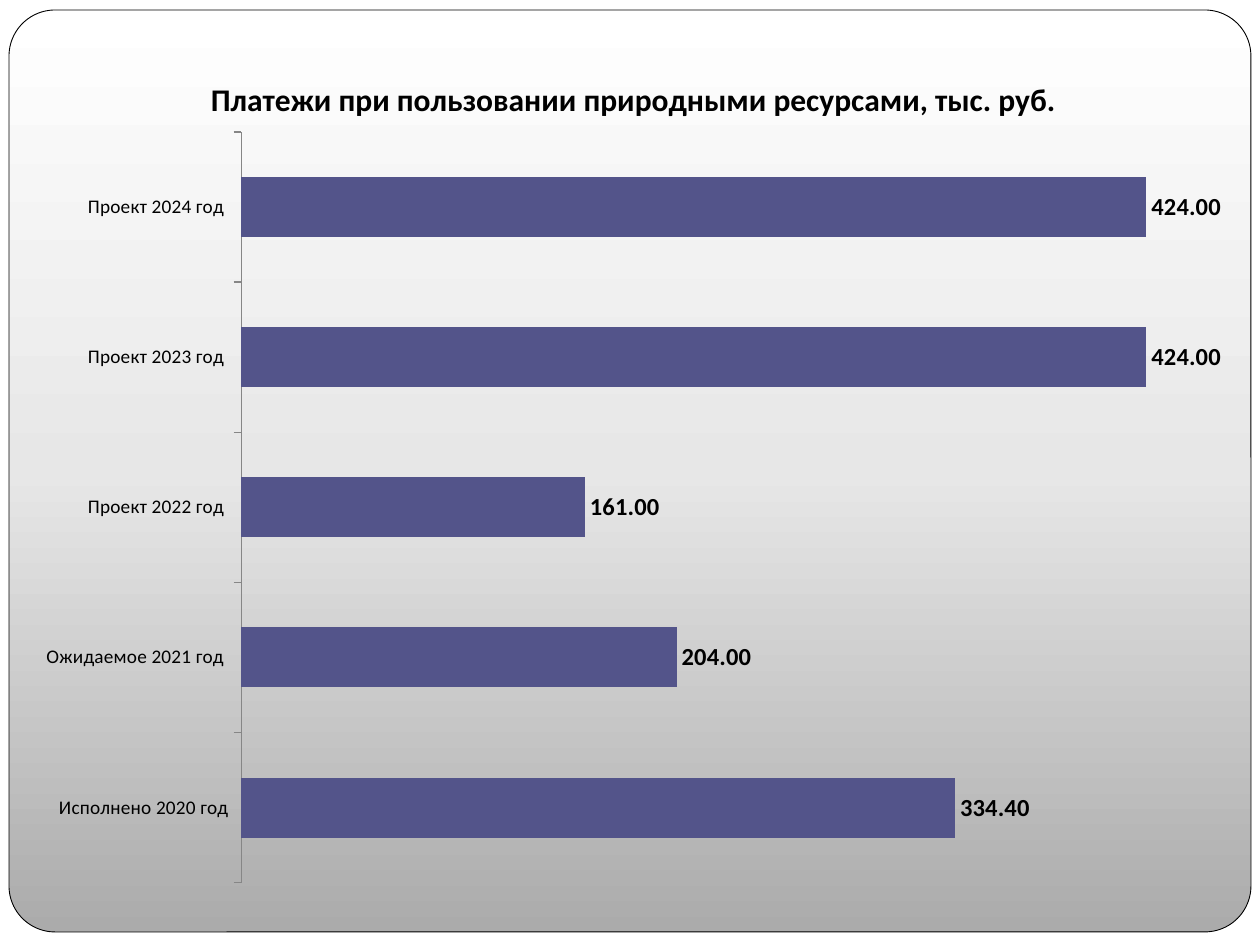
import copy
import pptx
import pptx.chart.data
import pptx.dml.color
import pptx.enum.chart
import pptx.enum.shapes
import pptx.oxml
import pptx.oxml.ns
import pptx.util

PX = 914400 / 126


def px(n):
    return pptx.util.Emu(round(n * PX))


def rgb(value):
    return pptx.dml.color.RGBColor.from_string(value)


prs = pptx.Presentation()
prs.slide_width, prs.slide_height = px(1260), px(945)
s = prs.slides.add_slide(prs.slide_layouts[6])
s.background.fill.solid()
s.background.fill.fore_color.rgb = rgb("FFFFFF")

sp = s.shapes.add_shape(pptx.enum.shapes.MSO_SHAPE.ROUNDED_RECTANGLE,
                        px(9), px(10), px(1242), px(922))
sp.adjustments[0] = 0.05
sp.shadow.inherit = False
sp.line.color.rgb = rgb("000000")
sp.line.width = pptx.util.Pt(0.5)
sp.fill.gradient()
sp.fill.gradient_angle = 90
gs_list = sp._element.spPr.find(".//" + pptx.oxml.ns.qn("a:gsLst"))
gs_list.append(copy.deepcopy(gs_list[-1]))
stops = [(0, "ABABAB"), (0.5, "E7E7E7"), (1, "FFFFFF")]
for stop, (position, color) in zip(sp.fill.gradient_stops, stops):
    stop.position = position
    stop.color.rgb = rgb(color)

data = pptx.chart.data.CategoryChartData(number_format="#,##0.00")
data.categories = ["Исполнено 2020 год", "Ожидаемое 2021 год ", "Проект 2022 год ",
                   "Проект 2023 год ", "Проект 2024 год "]
data.add_series("Series 1", [334.4, 204, 161, 424, 424])
chart = s.shapes.add_chart(pptx.enum.chart.XL_CHART_TYPE.BAR_CLUSTERED,
                           px(25), px(37), px(1201), px(863), data).chart
chart.has_legend = False
chart.font.name = "Calibri"
chart.font.size = pptx.util.Pt(10)
chart.font.color.rgb = rgb("000000")

tf = chart.chart_title.text_frame
tf.text = "Платежи при пользовании природными ресурсами, тыс. руб."
font = tf.paragraphs[0].runs[0].font
font.name = "Calibri"
font.size = pptx.util.Pt(18)
font.bold = True
font.color.rgb = rgb("000000")
chart.chart_title.include_in_layout = False

cat_axis = chart.category_axis
cat_axis.major_tick_mark = pptx.enum.chart.XL_TICK_MARK.OUTSIDE
cat_axis.format.line.color.rgb = rgb("868686")
cat_axis.tick_labels.font.name = "Calibri"
cat_axis.tick_labels.font.size = pptx.util.Pt(11)
cat_axis.tick_labels.font.color.rgb = rgb("000000")

val_axis = chart.value_axis
val_axis.visible = False
val_axis.has_major_gridlines = False
val_axis.minimum_scale, val_axis.maximum_scale = 0, 450

plot = chart.plots[0]
plot.gap_width = 150
plot.vary_by_categories = False
series = plot.series[0]
series.format.fill.solid()
series.format.fill.fore_color.rgb = rgb("53548A")
labels = series.data_labels
labels.show_value = True
labels.number_format = "#,##0.00"
labels.number_format_is_linked = False
labels.position = pptx.enum.chart.XL_LABEL_POSITION.OUTSIDE_END
labels.font.name = "Calibri"
labels.font.size = pptx.util.Pt(14)
labels.font.bold = True
labels.font.color.rgb = rgb("000000")

ns = pptx.oxml.ns.nsdecls("c")
title_layout = {"xMode": "edge", "yMode": "edge", "x": 0.15, "y": 0.04}
plot_layout = {"layoutTarget": "inner", "xMode": "edge", "yMode": "edge",
               "x": 0.18, "y": 0.11, "w": 0.8, "h": 0.87}
title = chart.chart_title._element
plot_area = chart._chartSpace.chart.plotArea
for parent, index, layout in [(title, 1, title_layout), (plot_area, 0, plot_layout)]:
    for old in parent.findall(pptx.oxml.ns.qn("c:layout")):
        parent.remove(old)
    parts = "".join(f'<c:{key} val="{value}"/>' for key, value in layout.items())
    xml = f"<c:layout {ns}><c:manualLayout>{parts}</c:manualLayout></c:layout>"
    parent.insert(index, pptx.oxml.parse_xml(xml))

prs.save("out.pptx")
